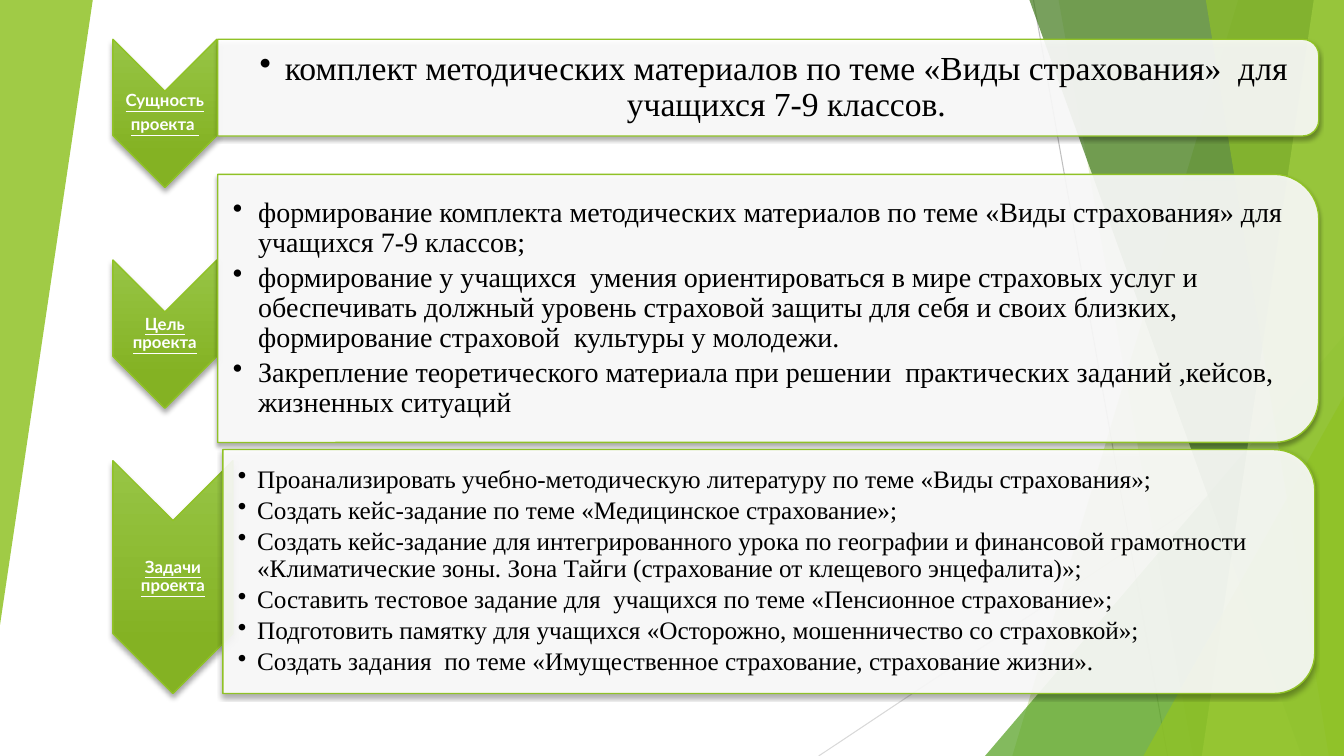
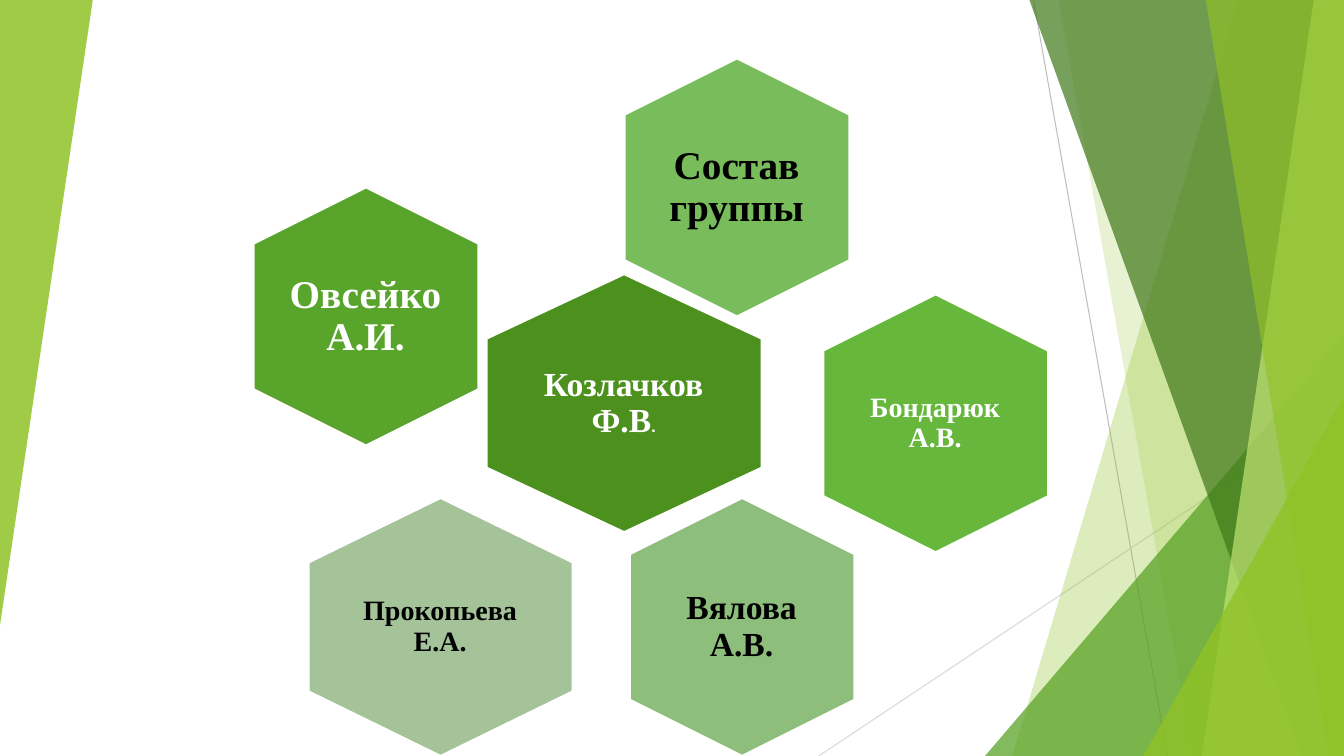
import pptx
import pptx.dml.color
import pptx.enum.shapes
import pptx.enum.text
import pptx.oxml
import pptx.oxml.ns
import pptx.util
from lxml import etree

Inches = pptx.util.Inches
Pt = pptx.util.Pt
qn = pptx.oxml.ns.qn
SHAPES = pptx.enum.shapes.MSO_SHAPE
ALIGN = pptx.enum.text.PP_ALIGN

WIDTH, HEIGHT = 13.33, 7.5
SERIF, SANS = "Times New Roman", "Lato"
COLORS = {
    "lime": "90C226", "green": "54A021", "dark": "3F7819", "pale": "C0E474",
    "gray": "BFBFBF", "light_gray": "D9D9D9", "white": "FFFFFF", "black": "000000",
    "arrow_top": "97C545", "arrow_bottom": "84B223",
    "hex1": "4C911E", "hex2": "59A52C", "hex3": "67B73D",
    "hex4": "79BC5B", "hex5": "8EBE7C", "hex6": "A4C399",
}

# Background: (from, to, colour)
RAYS = [((10.25, 0), (11.58, HEIGHT), "gray"), ((WIDTH, 4.03), (8.12, HEIGHT), "light_gray")]
# Bands reach the right edge: (left at top, left at bottom, colour, opacity);
# triangles: (left, top, width, height, rotation, colour, opacity)
FACETS = [
    (12.28, 10.04, "lime", 30),
    (10.5, 11.83, "lime", 20),
    (9.77, 3.33, 3.56, 4.17, 0, "green", 72),
    (10.21, 12.91, "dark", 70),
    (13.03, 11.92, "pale", 70),
    (11.96, 13.18, "lime", 65),
    (11.34, 3.93, 1.99, 3.57, 0, "lime", 80),
    (0, 0, 0.92, 6.2, 180, "lime", 85),
]

# Boxes are (left, top, width, height) as seen on the slide
SECTIONS = [
    {
        "label": ["Сущность", "проекта "],
        "arrow": (1.12, 0.39, 1.03, 1.47),
        "panel": (2.16, 0.39, 10.92, 0.96),
        "text": (2.15, 0.44, 10.87, 0.86),
        "size": 24, "inset": 0.19, "indent": 0.25, "align": ALIGN.CENTER,
        "items": ["комплект методических материалов по теме «Виды страхования»  для учащихся 7-9 классов."],
    },
    {
        "label": ["Цель проекта"],
        "arrow": (1.12, 2.58, 1.03, 1.47),
        "panel": (2.16, 1.73, 10.92, 2.66),
        "text": (2.15, 1.86, 10.79, 2.4),
        "size": 20, "inset": 0.16, "indent": 0.25, "align": ALIGN.LEFT,
        "items": [
            "формирование комплекта методических материалов по теме «Виды страхования» для  учащихся 7-9 классов;",
            "формирование у учащихся  умения ориентироваться в мире страховых услуг и обеспечивать "
            "должный уровень страховой защиты для себя и своих близких, формирование страховой  "
            "культуры у молодежи.",
            "Закрепление теоретического материала при решении  практических заданий ,кейсов, жизненных ситуаций",
        ],
    },
    {
        "label": ["Задачи проекта"],
        "arrow": (1.12, 4.57, 1.19, 2.31),
        "panel": (2.21, 4.46, 10.83, 2.42),
        "text": (2.22, 4.58, 10.71, 2.18),
        "size": 18, "inset": 0.14, "indent": 0.19, "align": ALIGN.LEFT,
        "items": [
            "Проанализировать учебно-методическую литературу по теме «Виды страхования»;",
            "Создать кейс-задание по теме «Медицинское страхование»;",
            "Создать кейс-задание для интегрированного урока по географии и финансовой грамотности "
            "«Климатические зоны. Зона Тайги (страхование от клещевого энцефалита)»;",
            "Составить тестовое задание для  учащихся по теме «Пенсионное страхование»;",
            "Подготовить памятку для учащихся «Осторожно, мошенничество со страховкой»;",
            "Создать задания  по теме «Имущественное страхование, страхование жизни».",
        ],
    },
]

# (centre x, centre y, width, fill, text colour, [(run, size, font, bold)])
HEX_HEIGHT = 2.56
MEMBERS = [
    (6.19, 4.0, 2.73, "hex1", "white", [("Козлачков Ф.В", 24, SERIF, True), (".", 13, SANS, True)]),
    (3.63, 3.14, 2.23, "hex2", "white", [("Овсейко А.И.", 28, SERIF, True)]),
    (9.28, 4.2, 2.23, "hex3", "white", [("Бондарюк А.В.", 20, SERIF, True)]),
    (7.31, 1.86, 2.23, "hex4", "black", [("Состав группы", 28, SERIF, True)]),
    (7.36, 6.22, 2.23, "hex5", "black", [("Вялова А.В.", 24, SERIF, True)]),
    (4.37, 6.22, 2.62, "hex6", "black", [("Прокопьева Е.А.", 20, SERIF, True)]),
]


def rgb(name):
    return pptx.dml.color.RGBColor.from_string(COLORS[name])


def paint(shape, fill, opacity=100, line=None, line_width=1):
    shape.shadow.inherit = False
    shape.fill.solid()
    shape.fill.fore_color.rgb = rgb(fill)
    if opacity < 100:
        color = shape.element.spPr.find(qn("a:solidFill")).find(qn("a:srgbClr"))
        etree.SubElement(color, qn("a:alpha"), val=str(opacity * 1000))
    if line:
        shape.line.color.rgb = rgb(line)
        shape.line.width = Pt(line_width)
    else:
        shape.line.fill.background()


def drop_shadow(shape, blur, distance):
    effects = shape.element.spPr.find(qn("a:effectLst"))
    shadow = etree.SubElement(
        effects, qn("a:outerShdw"), blurRad=str(Pt(blur)), dist=str(Pt(distance)),
        dir="5400000", rotWithShape="0")
    color = etree.SubElement(shadow, qn("a:srgbClr"), val=COLORS["black"])
    etree.SubElement(color, qn("a:alpha"), val="35000")


def add_turned(slide, preset, box):
    """Add a preset turned by 90 degrees so that it covers box on the slide."""
    left, top, width, height = box
    shift = (width - height) / 2
    shape = slide.shapes.add_shape(
        preset, Inches(left + shift), Inches(top - shift), Inches(height), Inches(width))
    shape.rotation = 90
    return shape


def add_text(slide, box, paragraphs, color, align=ALIGN.CENTER, inset=0.0,
             after=0.35, indent=0.0, underline=False):
    """Each paragraph is a list of (run, size, font, bold); after is a share of the size."""
    frame = slide.shapes.add_textbox(*map(Inches, box)).text_frame
    frame.word_wrap = True
    frame.vertical_anchor = pptx.enum.text.MSO_ANCHOR.MIDDLE
    frame.margin_left = Inches(inset)
    frame.margin_right = frame.margin_top = frame.margin_bottom = Inches(0.01)
    for number, runs in enumerate(paragraphs):
        paragraph = frame.add_paragraph() if number else frame.paragraphs[0]
        paragraph.alignment = align
        paragraph.line_spacing = 0.9
        paragraph.space_after = Pt(round(runs[0][1] * after, 1))
        if indent:
            properties = paragraph._p.get_or_add_pPr()
            properties.set("marL", str(Inches(indent)))
            properties.set("indent", str(-Inches(indent)))
            etree.SubElement(properties, qn("a:buChar"), char="•")
        for text, size, font, bold in runs:
            run = paragraph.add_run()
            run.text = text
            run.font.size = Pt(size)
            run.font.name = font
            run.font.bold = bold
            run.font.underline = underline
            run.font.color.rgb = rgb(color)


def add_band(slide, top_left, bottom_left):
    corners = [(top_left, 0), (WIDTH, 0), (WIDTH, HEIGHT), (bottom_left, HEIGHT)]
    points = [(Inches(x), Inches(y)) for x, y in corners]
    builder = slide.shapes.build_freeform(*points[0])
    builder.add_line_segments(points[1:], close=True)
    return builder.convert_to_shape()


def decorate_layout(layout, slide):
    """Draw the background on an empty slide, then hand it over to the layout."""
    for start, end, color in RAYS:
        ray = slide.shapes.add_connector(
            pptx.enum.shapes.MSO_CONNECTOR.STRAIGHT, *map(Inches, start + end))
        ray.line.color.rgb = rgb(color)
        ray.line.width = Pt(0.75)
        etree.SubElement(ray.element.spPr, qn("a:effectLst"))
    for *place, color, opacity in FACETS:
        if len(place) == 2:
            facet = add_band(slide, *place)
        else:
            *box, rotation = place
            facet = slide.shapes.add_shape(SHAPES.ISOSCELES_TRIANGLE, *map(Inches, box))
            facet.adjustments[0] = 1
            facet.rotation = rotation
        paint(facet, color, opacity)
    for placeholder in list(layout.placeholders):
        layout.shapes.element.remove(placeholder.element)
    for shape in list(slide.shapes):
        layout.shapes.element.append(shape.element)


def add_section(slide, section):
    arrow = add_turned(slide, SHAPES.CHEVRON, section["arrow"])
    paint(arrow, "lime", line="lime")
    arrow.fill.gradient()
    arrow.fill.gradient_angle = 0
    stops = zip(arrow.fill.gradient_stops, (0, 0.78), ("arrow_top", "arrow_bottom"))
    for stop, position, color in stops:
        stop.position = position
        stop.color.rgb = rgb(color)
    drop_shadow(arrow, 4, 3)
    left, top, width, height = section["arrow"]
    notch = width / 2
    add_text(slide, (left, top + notch, width, height - 2 * notch),
             [[(line, 12, SANS, True)] for line in section["label"]],
             "white", inset=0.01, underline=True)

    panel = add_turned(slide, SHAPES.ROUND_2_SAME_RECTANGLE, section["panel"])
    paint(panel, "white", 90, "lime")
    drop_shadow(panel, 3, 2)
    add_text(slide, section["text"],
             [[(item, section["size"], SERIF, False)] for item in section["items"]],
             "black", section["align"], section["inset"], 0.15, section["indent"])


def add_member(slide, center_x, center_y, width, fill, color, runs):
    box = (center_x - width / 2, center_y - HEX_HEIGHT / 2, width, HEX_HEIGHT)
    paint(add_turned(slide, SHAPES.HEXAGON, box), fill, line="white", line_width=1.5)
    text_width, text_height = 0.69 * width, 0.69 * HEX_HEIGHT
    add_text(slide, (center_x - text_width / 2, center_y - text_height / 2, text_width, text_height),
             [runs], color)


def main():
    deck = pptx.Presentation()
    deck.slide_width, deck.slide_height = Inches(WIDTH), Inches(HEIGHT)
    layout = deck.slide_layouts[6]
    project = deck.slides.add_slide(layout)
    decorate_layout(layout, project)
    for section in SECTIONS:
        add_section(project, section)
    group = deck.slides.add_slide(layout)
    for member in MEMBERS:
        add_member(group, *member)
    deck.save("out.pptx")


if __name__ == "__main__":
    main()
